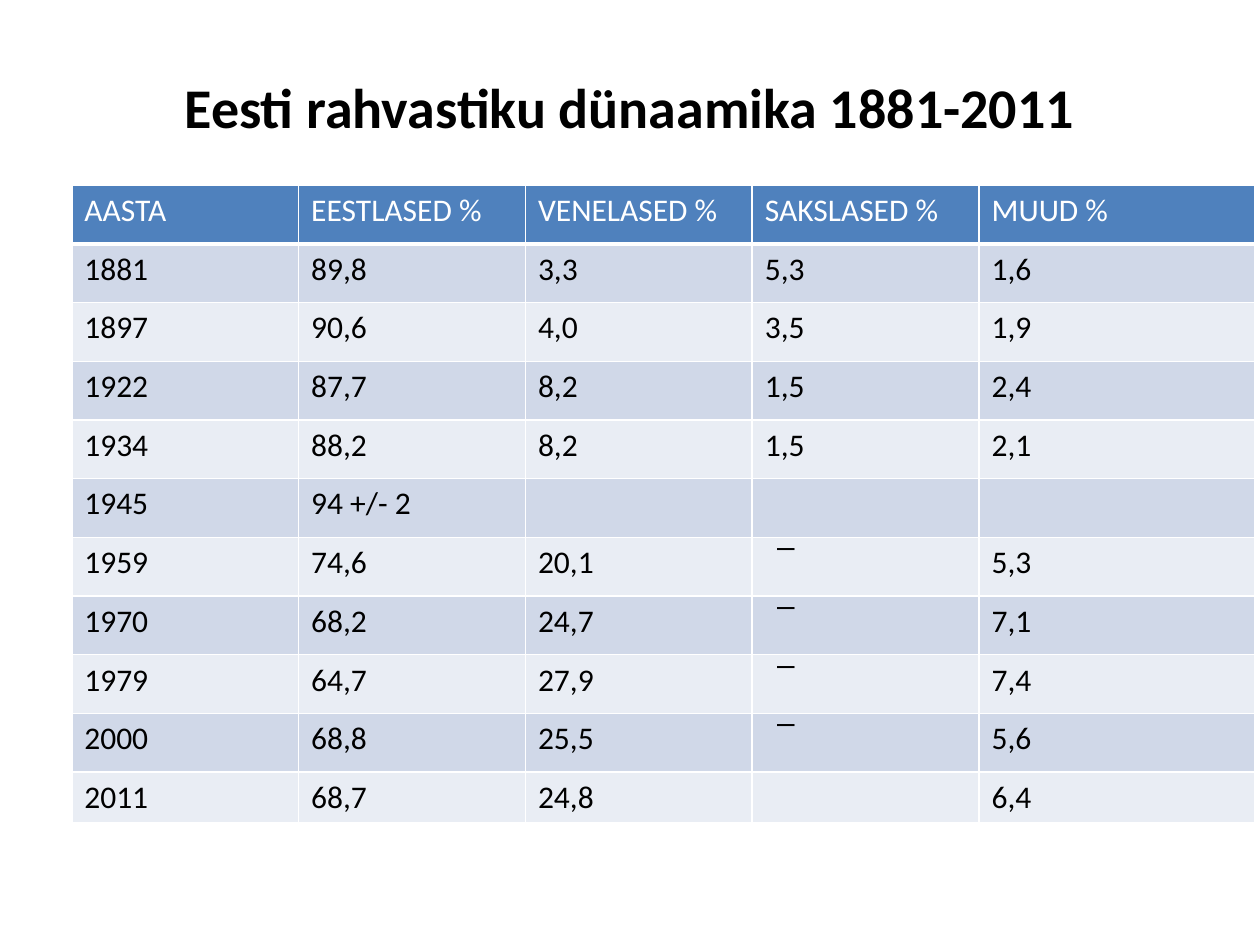
from lxml.etree import SubElement
from pptx import Presentation
from pptx.dml.color import RGBColor
from pptx.enum.text import MSO_ANCHOR as Anchor, PP_ALIGN as Align
from pptx.oxml.ns import qn
from pptx.util import Inches, Pt

TITLE = "Eesti rahvastiku dünaamika 1881-2011"
NONE_MARK = " ̅"
HEADER = ["AASTA", "EESTLASED %", "VENELASED %", "SAKSLASED %", "MUUD %"]
YEARS = [
    ["1881", "89,8", "3,3", "5,3", "1,6"],
    ["1897", "90,6", "4,0", "3,5", "1,9"],
    ["1922", "87,7", "8,2", "1,5", "2,4"],
    ["1934", "88,2", "8,2", "1,5", "2,1"],
    ["1945", "94 +/- 2", "", "", ""],
    ["1959", "74,6", "20,1", NONE_MARK, "5,3"],
    ["1970", "68,2", "24,7", NONE_MARK, "7,1"],
    ["1979", "64,7", "27,9", NONE_MARK, "7,4"],
    ["2000", "68,8", "25,5", NONE_MARK, "5,6"],
    ["2011", "68,7", "24,8", "", "6,4"],
]
COLORS = {
    "text": "000000",
    "header_text": "FFFFFF",
    "border": "FFFFFF",
    "header": "4F81BD",
    "odd": "D0D8E8",
    "even": "E9EDF4",
}
FONT = "Calibri"
LEFT, TOP, HEIGHT = 0.57, 1.47, 5.06
COLUMN_WIDTHS = [1.8] * 4 + [2.19]
LAST_ROW = 0.4
ROW = (HEIGHT - LAST_ROW) / len(YEARS)
MARK_MARGIN = 0.21


def write(frame, text, size=18, color="text", bold=False, align=Align.LEFT):
    paragraph = frame.paragraphs[0]
    paragraph.alignment = align
    paragraph.font.size = Pt(size)
    if not text:
        return
    run = paragraph.add_run()
    run.text = text
    run.font.name = FONT
    run.font.size = Pt(size)
    run.font.bold = bold
    run.font.color.rgb = RGBColor.from_string(COLORS[color])


def add_borders(cell, bottom=1):
    """Line all four sides; call before the fill, which must follow in the XML."""
    properties = cell._tc.get_or_add_tcPr()
    for side, width in (("L", 1), ("R", 1), ("T", 1), ("B", bottom)):
        line = SubElement(properties, qn(f"a:ln{side}"), w=str(Pt(width)))
        solid = SubElement(line, qn("a:solidFill"))
        SubElement(solid, qn("a:srgbClr"), val=COLORS["border"])


def add_title(slide):
    box = slide.shapes.add_textbox(Inches(0.5), Inches(0.3), Inches(9), Inches(1.09))
    frame = box.text_frame
    frame.word_wrap = True
    frame.vertical_anchor = Anchor.MIDDLE
    write(frame, TITLE, size=32, bold=True, align=Align.CENTER)


def add_population_table(slide):
    rows = [HEADER] + YEARS
    table = slide.shapes.add_table(
        len(rows), len(HEADER), Inches(LEFT), Inches(TOP),
        Inches(sum(COLUMN_WIDTHS)), Inches(HEIGHT)).table
    for column, width in zip(table.columns, COLUMN_WIDTHS):
        column.width = Inches(width)
    for r, values in enumerate(rows):
        table.rows[r].height = Inches(LAST_ROW if r == len(YEARS) else ROW)
        is_header = r == 0
        band = "header" if is_header else "odd" if r % 2 else "even"
        for c, value in enumerate(values):
            cell = table.cell(r, c)
            add_borders(cell, bottom=3 if is_header else 1)
            cell.fill.solid()
            cell.fill.fore_color.rgb = RGBColor.from_string(COLORS[band])
            if value == NONE_MARK:
                cell.margin_left = Inches(MARK_MARGIN)
            write(cell.text_frame, value, color="header_text" if is_header else "text")


def main():
    deck = Presentation()
    deck.slide_width, deck.slide_height = Inches(10), Inches(7.5)
    slide = deck.slides.add_slide(deck.slide_layouts[6])
    add_title(slide)
    add_population_table(slide)
    deck.save("out.pptx")


if __name__ == "__main__":
    main()
